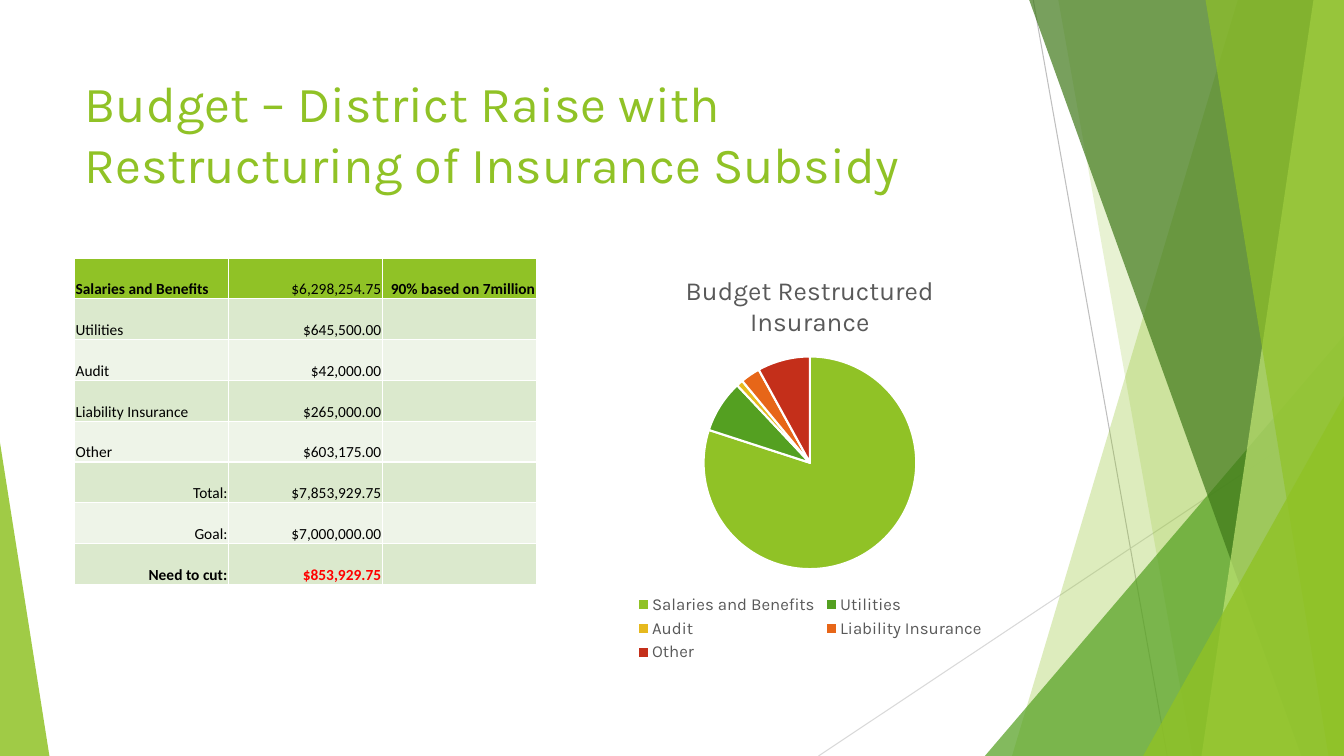
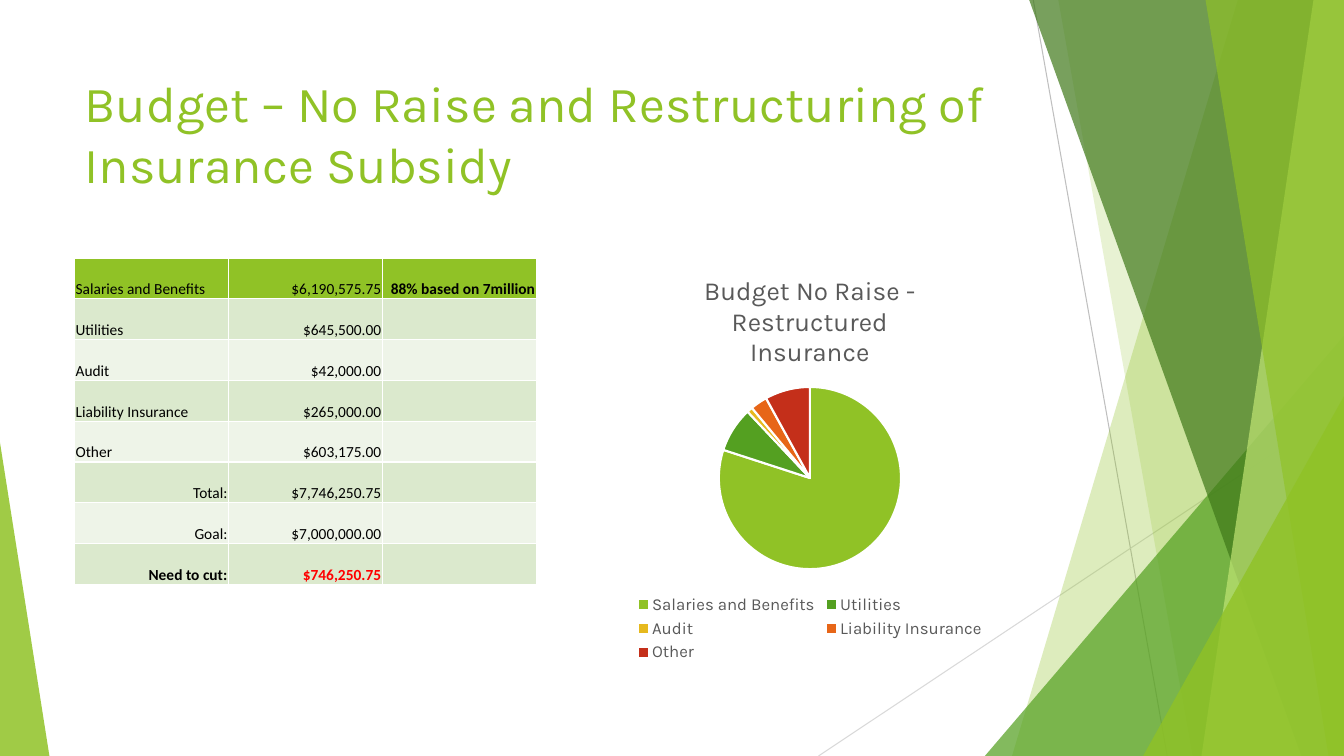
from lxml import etree
from pptx import Presentation
from pptx import util as u
from pptx.chart import data
from pptx.dml import color
from pptx.enum import chart as ch, shapes, text
from pptx.oxml import ns

GREEN, LEAF, FOREST, LIME = "90C226", "54A021", "3F7819", "C0E474"
BANDS = ["EEF4E8", "DBE9CD"]
BLACK, GREY, RED, WHITE = "000000", "595959", "FF0000", "FFFFFF"
PIE_COLOURS = [GREEN, LEAF, "E6B91E", "E76618", "C42F1A"]
HEADING_FONT, TABLE_FONT = "Karla", "Calibri"

deck = Presentation()
deck.slide_width, deck.slide_height = u.Inches(13.333), u.Inches(7.5)


def span(*shares):
    """Turn alternating percentages of slide width and height into lengths."""
    sides = (deck.slide_width, deck.slide_height)
    return [int(share * sides[i % 2] / 100) for i, share in enumerate(shares)]


def paint(fill, colour, opacity=100):
    """Give a solid fill its hex colour, optionally see-through."""
    fill.solid()
    fill.fore_color.rgb = color.RGBColor.from_string(colour)
    if opacity < 100:
        tint = fill._xPr.find(ns.qn("a:solidFill"))[0]
        etree.SubElement(tint, ns.qn("a:alpha"), val=str(opacity * 1000))


# Shared decoration: hairlines, then facets from back to front
hairlines = [((76.88, 0, 86.85, 100), "BFBFBF"), ((100, 53.73, 60.9, 100), "D9D9D9")]
# A blade gives its top and bottom left corners and runs to the right edge;
# a wedge gives its box and the place of its apex
facets = [
    ("blade", (92.1, 75.3), GREEN, 30),
    ("blade", (78.75, 88.73), GREEN, 20),
    ("wedge", (73.28, 44.4, 26.72, 55.6, 1), LEAF, 72),
    ("blade", (76.58, 96.83), FOREST, 70),
    ("blade", (97.73, 89.4), LIME, 70),
    ("blade", (89.7, 98.85), GREEN, 65),
    ("wedge", (85.05, 52.4, 14.95, 47.6, 1), GREEN, 80),
    ("wedge", (0, 58.53, 3.68, 41.47, 0), GREEN, 85),
]

# Content of the two budgets
expenses = [("Utilities", "$645,500.00"), ("Audit", "$42,000.00"),
            ("Liability Insurance", "$265,000.00"), ("Other", "$603,175.00")]
categories = ["Salaries and Benefits"] + [name for name, _ in expenses]
expense_shares = [80, 8, 1, 3, 8]
budgets = [
    dict(title="Budget – District Raise with Restructuring of Insurance Subsidy",
         salaries="$6,298,254.75", bold_salaries=True, note="90% based on 7million",
         total="$7,853,929.75", cut="$853,929.75",
         pie_title=["Budget Restructured", "Insurance"]),
    dict(title="Budget – No Raise and Restructuring of Insurance Subsidy",
         salaries="$6,190,575.75", bold_salaries=False, note="88% based on 7million",
         total="$7,746,250.75", cut="$746,250.75",
         pie_title=["Budget No Raise -", "Restructured", "Insurance"]),
]

for budget in budgets:
    slide = deck.slides.add_slide(deck.slide_layouts[6])

    # Decoration
    for ends, colour in hairlines:
        hairline = slide.shapes.add_connector(shapes.MSO_CONNECTOR.STRAIGHT, *span(*ends))
        paint(hairline.line.fill, colour)
        hairline.line.width = u.Pt(0.75)
        etree.SubElement(hairline._element.spPr, ns.qn("a:effectLst"))
    for kind, geometry, colour, opacity in facets:
        if kind == "blade":
            top, bottom = geometry
            outline = slide.shapes.build_freeform(*span(top, 0))
            outline.add_line_segments(
                [span(100, 0), span(100, 100), span(bottom, 100)], close=True)
            facet = outline.convert_to_shape()
        else:
            facet = slide.shapes.add_shape(
                shapes.MSO_SHAPE.ISOSCELES_TRIANGLE, *span(*geometry[:4]))
            facet.adjustments[0] = geometry[4]
        paint(facet.fill, colour, opacity)
        facet.line.fill.background()
        facet.shadow.inherit = False

    # Title
    heading = slide.shapes.add_textbox(*span(5.55, 8.93, 70.5, 19.2)).text_frame
    heading.word_wrap = True
    heading.vertical_anchor = text.MSO_ANCHOR.TOP
    run = heading.paragraphs[0].add_run()
    run.text = budget["title"]
    run.font.name, run.font.size = HEADING_FONT, u.Pt(36)
    paint(run.font.fill, GREEN)

    # Budget table
    rows = [(categories[0], budget["salaries"], budget["note"])]
    rows += [(name, amount, "") for name, amount in expenses]
    rows += [("Total:", budget["total"], ""), ("Goal:", "$7,000,000.00", ""),
             ("Need to cut:", budget["cut"], "")]
    last = len(rows) - 1
    table = slide.shapes.add_table(len(rows), 3, *span(5.55, 34.13, 34.35, 43.2)).table
    for r, row in enumerate(rows):
        for c, entry in enumerate(row):
            cell = table.cell(r, c)
            paint(cell.fill, BANDS[r % 2] if r else GREEN)
            cell.vertical_anchor = text.MSO_ANCHOR.BOTTOM
            cell.margin_left = cell.margin_right = cell.margin_top = u.Inches(0.01)
            cell.margin_bottom = 0
            if not entry:
                continue
            line = cell.text_frame.paragraphs[0]
            is_label = c == 0 and r < len(categories)
            line.alignment = text.PP_ALIGN.LEFT if is_label else text.PP_ALIGN.RIGHT
            run = line.add_run()
            run.text = entry
            run.font.name, run.font.size = TABLE_FONT, u.Pt(11)
            run.font.bold = (r == last or (r, c) == (0, 2)
                             or ((r, c) == (0, 0) and budget["bold_salaries"]))
            paint(run.font.fill, RED if (r, c) == (last, 1) else BLACK)

    # Pie of expense shares
    pie_data = data.CategoryChartData()
    pie_data.categories = categories
    pie_data.add_series("Series 1", expense_shares)
    pie = slide.shapes.add_chart(
        ch.XL_CHART_TYPE.PIE, *span(41.7, 34.13, 37.13, 54), pie_data).chart
    pie.font.name, pie.font.size = HEADING_FONT, u.Pt(10)
    pie.plots[0].vary_by_categories = True
    for i, colour in enumerate(PIE_COLOURS):
        slice_format = pie.plots[0].series[0].points[i].format
        paint(slice_format.fill, colour)
        paint(slice_format.line.fill, WHITE)
        slice_format.line.width = u.Pt(1.5)

    pie.has_title = True
    caption = pie.chart_title.text_frame
    for i, words in enumerate(budget["pie_title"]):
        line = caption.add_paragraph() if i else caption.paragraphs[0]
        run = line.add_run()
        run.text = words
        run.font.name, run.font.size, run.font.bold = HEADING_FONT, u.Pt(18.6), False
        paint(run.font.fill, GREY)

    pie.has_legend = True
    pie.legend.position = ch.XL_LEGEND_POSITION.BOTTOM
    pie.legend.include_in_layout = False
    pie.legend.font.name, pie.legend.font.size = HEADING_FONT, u.Pt(12)
    paint(pie.legend.font.fill, GREY)

deck.save("out.pptx")
